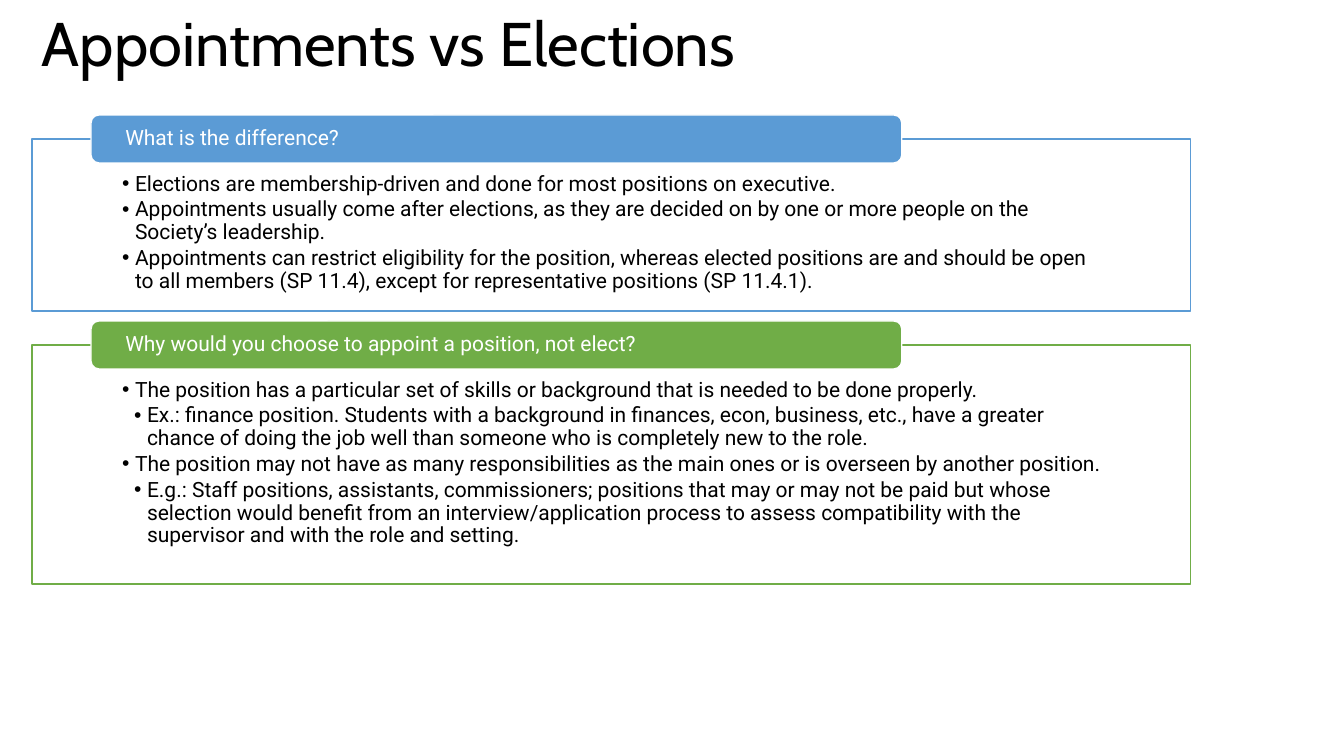
from lxml import etree
from pptx import Presentation
from pptx.dml.color import RGBColor
from pptx.enum.shapes import MSO_SHAPE
from pptx.enum.text import MSO_ANCHOR, MSO_AUTO_SIZE, PP_ALIGN
from pptx.oxml.ns import qn
from pptx.util import Emu, Pt

ROUND = MSO_SHAPE.ROUNDED_RECTANGLE
TOP, MIDDLE = MSO_ANCHOR.TOP, MSO_ANCHOR.MIDDLE
FIXED = MSO_AUTO_SIZE.NONE
LEFT = PP_ALIGN.LEFT
INCH = 914400
SCALE = INCH / 100.8
COLORS = {"blue": "5B9BD5", "green": "70AD47", "white": "FFFFFF", "black": "000000"}
HANG = 13
INDENTS = (13, 25)

PANELS = [
    ("blue", (32, 139, 1158, 172), "What is the difference?", [
        (0, "Elections are membership-driven and done for most positions on executive."),
        (0, "Appointments usually come after elections, as they are decided on by one or more "
            "people on the Society’s leadership."),
        (0, "Appointments can restrict eligibility for the position, whereas elected positions "
            "are and should be open to all members (SP 11.4), except for representative "
            "positions (SP 11.4.1)."),
    ]),
    ("green", (32, 345, 1158, 239), "Why would you choose to appoint a position, not elect?", [
        (0, "The position has a particular set of skills or background that is needed to be "
            "done properly."),
        (1, "Ex.: finance position. Students with a background in finances, econ, business, "
            "etc., have a greater chance of doing the job well than someone who is completely "
            "new to the role."),
        (0, "The position may not have as many responsibilities as the main ones or is overseen "
            "by another position."),
        (1, "E.g.: Staff positions, assistants, commissioners; positions that may or may not be "
            "paid but whose selection would benefit from an interview/application process to "
            "assess compatibility with the supervisor and with the role and setting."),
    ]),
]


def px(size):
    return Emu(round(size * SCALE))


def color(name):
    return RGBColor.from_string(COLORS[name])


def place(shape, box):
    shape.left, shape.top, shape.width, shape.height = map(px, box)


def paint(shape, fill, line):
    shape.fill.solid()
    shape.fill.fore_color.rgb = color(fill)
    shape.line.color.rgb = color(line)
    shape.line.width = Pt(1)


def frame(shape, pads, anchor):
    body = shape.text_frame
    body.word_wrap = True
    body.auto_size = FIXED
    body.vertical_anchor = anchor
    (body.margin_left, body.margin_top,
     body.margin_right, body.margin_bottom) = map(px, pads)
    return body


def write(para, text, size, face, tint):
    para.alignment = LEFT
    para.line_spacing = 0.9
    para.space_before = Pt(0)
    run = para.add_run()
    run.text = text
    run.font.size = Pt(size)
    run.font.name = face
    run.font.color.rgb = color(tint)


def bullet(para, level):
    para.level = level
    props = para._p.get_or_add_pPr()
    props.set("marL", str(px(INDENTS[level])))
    props.set("indent", str(-px(HANG)))
    etree.SubElement(props, qn("a:buChar")).set("char", "•")


def title(shape, box):
    place(shape, box)
    body = frame(shape, (10, 5, 10, 5), MIDDLE)
    write(body.paragraphs[0], "Appointments vs Elections", 44, "Cabin", "black")


def panel(slide, shape, box, tint, head, items):
    left, top, width, height = box
    place(shape, box)
    paint(shape, "white", tint)
    body = frame(shape, (90, 34, 86, 12), TOP)
    for index, (level, text) in enumerate(items):
        para = body.add_paragraph() if index else body.paragraphs[0]
        bullet(para, level)
        write(para, text, 15, "Roboto", "black")
        para.space_after = Pt(2.25)

    tab = slide.shapes.add_shape(ROUND, *map(px, (left + 59, top - 24, width * 0.7, 48)))
    tab.shadow.inherit = False
    paint(tab, tint, "white")
    label = frame(tab, (32, 0, 32, 0), MIDDLE)
    write(label.paragraphs[0], head, 15, "Roboto", "white")


def main():
    deck = Presentation()
    deck.slide_width = Emu(round(13.33 * INCH))
    deck.slide_height = Emu(round(7.5 * INCH))
    slide = deck.slides.add_slide(deck.slide_layouts[3])
    title(slide.shapes.title, (32, 0, 1158, 93))
    lists = list(slide.placeholders)[1:]
    for shape, (tint, box, head, items) in zip(lists, PANELS):
        panel(slide, shape, box, tint, head, items)
    deck.save("out.pptx")


if __name__ == "__main__":
    main()
